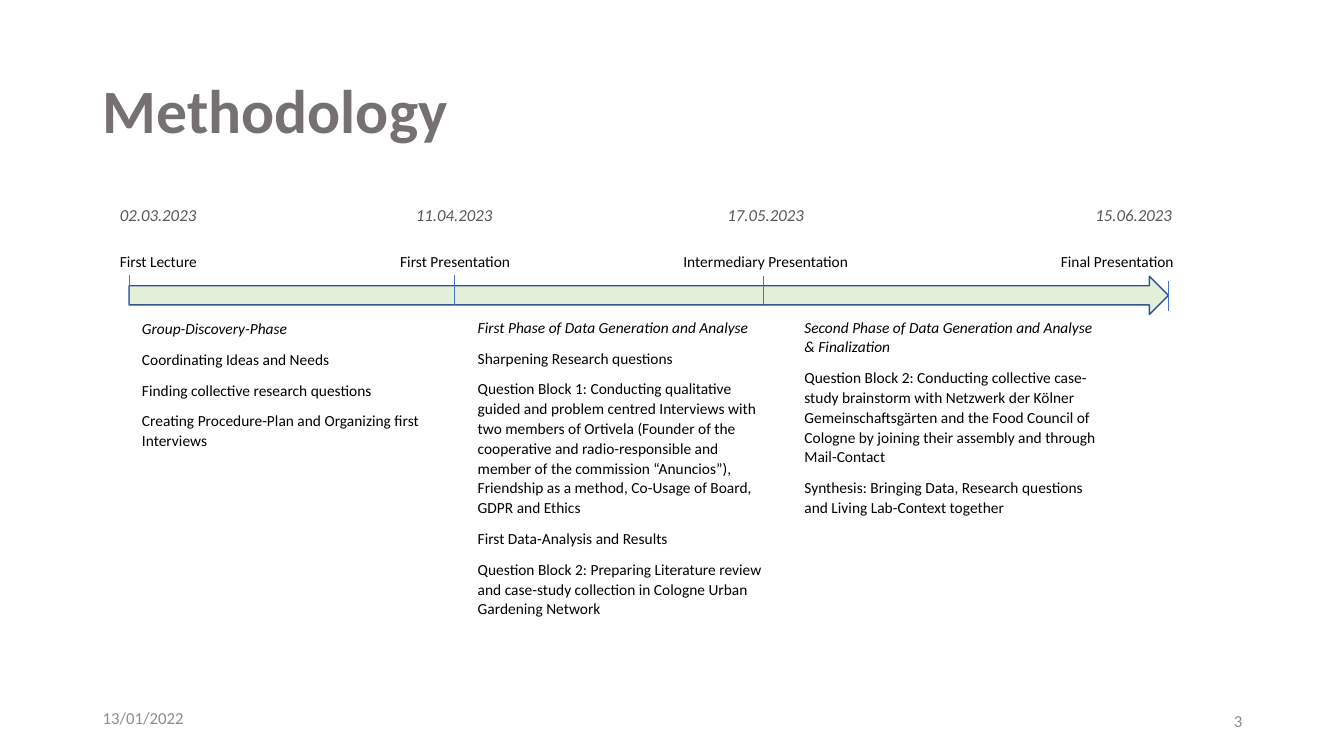
from lxml import etree
from pptx import Presentation
from pptx.dml.color import RGBColor
from pptx.enum.shapes import MSO_CONNECTOR, MSO_SHAPE
from pptx.enum.text import MSO_ANCHOR, MSO_AUTO_SIZE, PP_ALIGN
from pptx.oxml.ns import qn
from pptx.util import Pt

LEFT, CENTER, RIGHT = PP_ALIGN.LEFT, PP_ALIGN.CENTER, PP_ALIGN.RIGHT
TOP, MIDDLE = MSO_ANCHOR.TOP, MSO_ANCHOR.MIDDLE
PX = 9144
COLORS = {
    "title": "767171",
    "footer": "8C8C8C",
    "date": "595959",
    "text": "000000",
    "panel": "FFFFFF",
    "arrow": "E2F0D9",
    "outline": "325491",
    "tick": "4472C4",
}


def color(name):
    return RGBColor.from_string(COLORS[name])


def write(box, lines, size, ink, align=LEFT, anchor=TOP, wrap=True):
    frame = box.text_frame
    frame.auto_size = MSO_AUTO_SIZE.NONE
    frame.word_wrap = wrap
    frame.vertical_anchor = anchor
    frame.text = "\n".join(lines)
    for para in frame.paragraphs:
        para.alignment = align
        para.font.name = "Calibri"
        para.font.size = Pt(size)
        para.font.color.rgb = color(ink)
    return frame.paragraphs


deck = Presentation()
deck.slide_width, deck.slide_height = 1333 * PX, 750 * PX
page = deck.slides.add_slide(deck.slide_layouts[5])
shapes = page.shapes

title = shapes.title
title.left, title.top, title.width, title.height = 92 * PX, 40 * PX, 1150 * PX, 145 * PX
heading = write(title, ["Methodology"], 44, "title", anchor=MIDDLE)[0]
heading.font.bold = True
heading.line_spacing = 0.9

for left, top, text, align in [(92, 692, "13/01/2022", LEFT), (942, 695, "3", RIGHT)]:
    box = shapes.add_textbox(left * PX, top * PX, 300 * PX, 40 * PX)
    write(box, [text], 12, "footer", align, MIDDLE)

milestones = [
    (109, "02.03.2023", LEFT, 109, 123, "First Lecture", LEFT),
    (402, "11.04.2023", CENTER, 348, 207, "First Presentation", CENTER),
    (711, "17.05.2023", CENTER, 656, 207, "Intermediary Presentation", CENTER),
    (1076, "15.06.2023", CENTER, 967, 207, "Final Presentation", RIGHT),
]
phases = [
    (131, 310, 262, [
        "Group-Discovery-Phase",
        "Coordinating Ideas and Needs",
        "Finding collective research questions",
        "Creating Procedure-Plan and Organizing first Interviews",
    ]),
    (464, 309, 323, [
        "First Phase of Data Generation and Analyse",
        "Sharpening Research questions",
        "Question Block 1: Conducting qualitative guided and problem centred Interviews with "
        "two members of Ortivela (Founder of the cooperative and radio-responsible and member "
        "of the commission “Anuncios”), Friendship as a method, Co-Usage of Board, "
        "GDPR and Ethics",
        "First Data-Analysis and Results",
        "Question Block 2: Preparing Literature review and case-study collection in Cologne "
        "Urban Gardening Network",
    ]),
    (788, 309, 295, [
        "Second Phase of Data Generation and Analyse & Finalization",
        "Question Block 2: Conducting collective case-study brainstorm with Netzwerk der Kölner "
        "Gemeinschaftsgärten and the Food Council of Cologne by joining their assembly and "
        "through Mail-Contact",
        "Synthesis: Bringing Data, Research questions and Living Lab-Context together",
    ]),
]

panels = []
for date_left, date, date_align, left, width, label, align in milestones:
    box = shapes.add_textbox(date_left * PX, 198 * PX, 97 * PX, 30 * PX)
    write(box, [date], 12, "date", date_align, wrap=False)[0].font.italic = True
    panels.append((left, 244, width, 31, [label], align))
for left, top, height, lines in phases:
    panels.append((left, top, 314, height, lines, LEFT))

for left, top, width, height, lines, align in panels:
    panel = shapes.add_shape(MSO_SHAPE.RECTANGLE, left * PX, top * PX, width * PX, height * PX)
    panel.shadow.inherit = False
    panel.fill.solid()
    panel.fill.fore_color.rgb = color("panel")
    panel.line.fill.background()
    paragraphs = write(panel, lines, 11, "text", align)
    paragraphs[0].font.italic = len(lines) > 1
    for para in paragraphs:
        para.line_spacing = 1.07
        para.space_after = Pt(8)

arrow = shapes.add_shape(MSO_SHAPE.RIGHT_ARROW, 128 * PX, 274 * PX, 1031 * PX, 38 * PX)
arrow.shadow.inherit = False
arrow.fill.solid()
arrow.fill.fore_color.rgb = color("arrow")
arrow.line.color.rgb = color("outline")
arrow.line.width = Pt(1)

for x, top in [(128, 273), (451, 273), (757, 274), (1159, 279)]:
    tick = shapes.add_connector(
        MSO_CONNECTOR.STRAIGHT, x * PX, top * PX, x * PX, (top + 30) * PX)
    tick.line.color.rgb = color("tick")
    tick.line.width = Pt(0.5)
    etree.SubElement(tick._element.spPr, qn("a:effectLst"))

deck.save("out.pptx")
